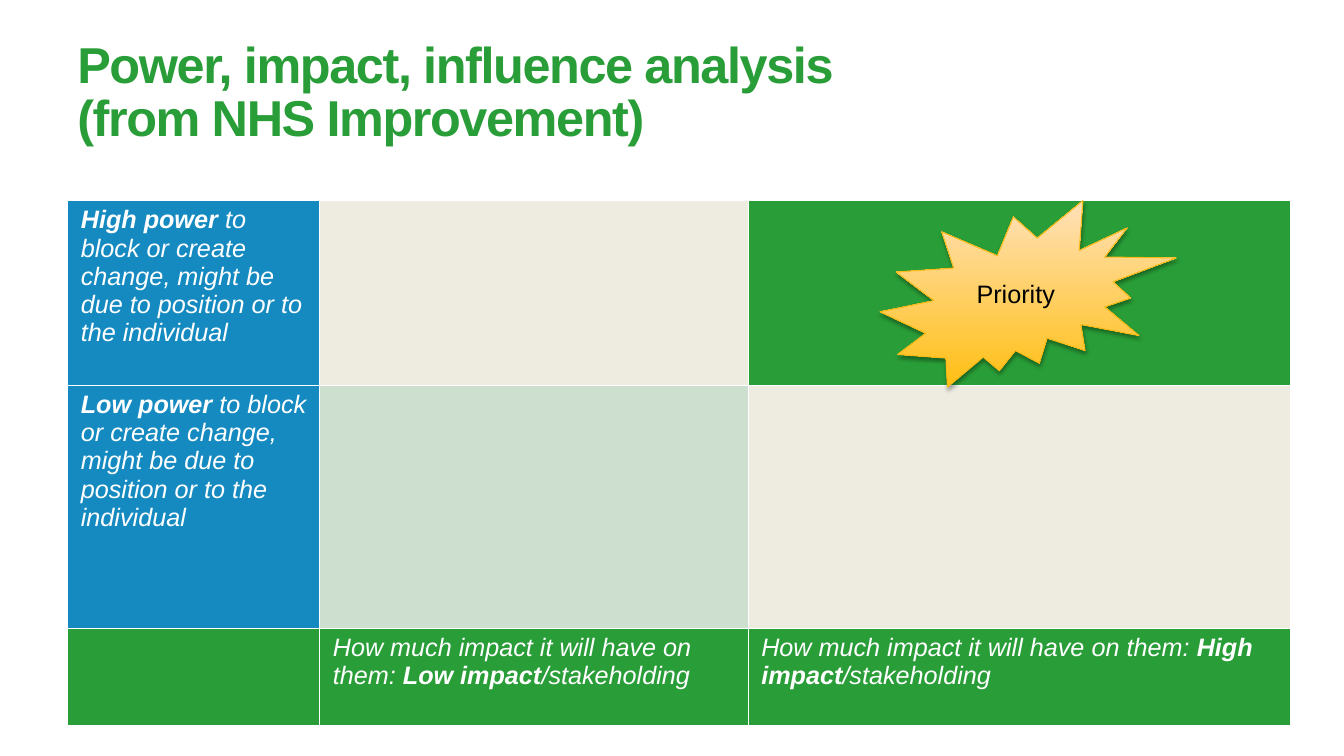
from lxml import etree
from pptx import Presentation
from pptx.dml.color import RGBColor
from pptx.enum.shapes import MSO_SHAPE
from pptx.enum.text import MSO_ANCHOR, PP_ALIGN
from pptx.oxml import parse_xml
from pptx.oxml.ns import qn
from pptx.util import Pt

BURST = MSO_SHAPE.EXPLOSION2
MIDDLE = MSO_ANCHOR.MIDDLE
LEFT = PP_ALIGN.LEFT
TITLE_ONLY = 5
FONT = "Arial"
DRAWING_NS = "http://schemas.openxmlformats.org/drawingml/2006/main"
COLORS = {
    "green": "299D37",
    "blue": "158AC1",
    "cream": "EEECE1",
    "mint": "CDDFCE",
    "white": "FFFFFF",
    "black": "000000",
    "amber": "FFBF13",
    "peach": "FFE1B9",
    "amber_line": "F6B916",
}

# Each cell: fill colour and runs of (text, bold)
POWER = " to block or create change, might be due to position or to the individual"
IMPACT = "How much impact it will have on them: "
STAKE = "/stakeholding"
GRID = [
    [("blue", [("High power", True), (POWER, False)]), ("cream", []), ("green", [])],
    [("blue", [("Low power", True), (POWER, False)]), ("mint", []), ("cream", [])],
    [
        ("green", []),
        ("green", [(IMPACT, False), ("Low impact", True), (STAKE, False)]),
        ("green", [(IMPACT, False), ("High impact", True), (STAKE, False)]),
    ],
]
COLUMN_WIDTHS = [180, 306, 387.4]
ROW_HEIGHTS = [132, 173.5, 69.3]


def rgb(name):
    return RGBColor.from_string(COLORS[name])


def style_font(font, size, color, bold=False, italic=False):
    font.name = FONT
    font.size = Pt(size)
    font.bold = bold
    font.italic = italic
    font.color.rgb = rgb(color)


def add_title(slide, text):
    title = slide.shapes.title
    title.left, title.top, title.width, title.height = Pt(48), Pt(21.6), Pt(596), Pt(90)
    frame = title.text_frame
    frame.text = text
    frame.word_wrap = True
    frame.vertical_anchor = MIDDLE
    heading = frame.paragraphs[0]
    heading.alignment = LEFT
    heading.line_spacing = Pt(38)
    for run in heading.runs:
        style_font(run.font, 36, "green", bold=True)
        run.font._element.set("spc", "-100")


def add_borders(cell, color, width):
    properties = cell._tc.get_or_add_tcPr()
    for position, side in enumerate(("lnL", "lnR", "lnT", "lnB")):
        properties.insert(position, parse_xml(
            f'<a:{side} xmlns:a="{DRAWING_NS}" w="{Pt(width)}"><a:solidFill>'
            f'<a:srgbClr val="{COLORS[color]}"/></a:solidFill></a:{side}>'))


def fill_cell(cell, color, parts):
    cell.fill.solid()
    cell.fill.fore_color.rgb = rgb(color)
    add_borders(cell, "white", 1)
    cell.margin_left = cell.margin_right = Pt(9.4)
    cell.margin_top = cell.margin_bottom = Pt(3.6)
    paragraph = cell.text_frame.paragraphs[0]
    for text, bold in parts:
        run = paragraph.add_run()
        run.text = text
        style_font(run.font, 18, "white", bold, italic=True)


def add_matrix(slide):
    matrix = slide.shapes.add_table(
        len(ROW_HEIGHTS), len(COLUMN_WIDTHS), Pt(48.4), Pt(143.5),
        Pt(sum(COLUMN_WIDTHS)), Pt(sum(ROW_HEIGHTS))).table
    matrix.first_row = matrix.horz_banding = False
    for column, width in zip(matrix.columns, COLUMN_WIDTHS):
        column.width = Pt(width)
    for row, height, contents in zip(matrix.rows, ROW_HEIGHTS, GRID):
        row.height = Pt(height)
        for cell, (color, parts) in zip(row.cells, contents):
            fill_cell(cell, color, parts)


def add_soft_shadow(shape):
    shape.shadow.inherit = False
    effects = shape._element.spPr.find(qn("a:effectLst"))
    shadow = etree.SubElement(
        effects, qn("a:outerShdw"), blurRad=str(Pt(3.1)), dist=str(Pt(1.8)),
        dir="5400000", rotWithShape="0")
    tint = etree.SubElement(shadow, qn("a:srgbClr"), val=COLORS["black"])
    etree.SubElement(tint, qn("a:alpha"), val="35000")


def add_burst(slide):
    burst = slide.shapes.add_shape(BURST, Pt(628.6), Pt(143.3), Pt(211.7), Pt(133.2))
    burst.fill.gradient()
    burst.fill.gradient_angle = 90
    for stop, position, color in zip(
            burst.fill.gradient_stops, (0, 1), ("amber", "peach")):
        stop.position = position
        stop.color.rgb = rgb(color)
    burst.line.color.rgb = rgb("amber_line")
    burst.line.width = Pt(0.75)
    add_soft_shadow(burst)


def add_label(slide, text):
    label = slide.shapes.add_textbox(Pt(690.5), Pt(195.1), Pt(124.6), Pt(29))
    frame = label.text_frame
    frame.word_wrap = True
    frame.text = text
    style_font(frame.paragraphs[0].runs[0].font, 18, "black")


def main():
    presentation = Presentation()
    presentation.slide_width, presentation.slide_height = Pt(960), Pt(540)
    slide = presentation.slides.add_slide(presentation.slide_layouts[TITLE_ONLY])

    # Heading
    add_title(slide, "Power, impact, influence analysis (from NHS Improvement)")

    # Power and impact matrix
    add_matrix(slide)

    # Priority marker
    add_burst(slide)
    add_label(slide, "Priority")

    presentation.save("out.pptx")


if __name__ == "__main__":
    main()
